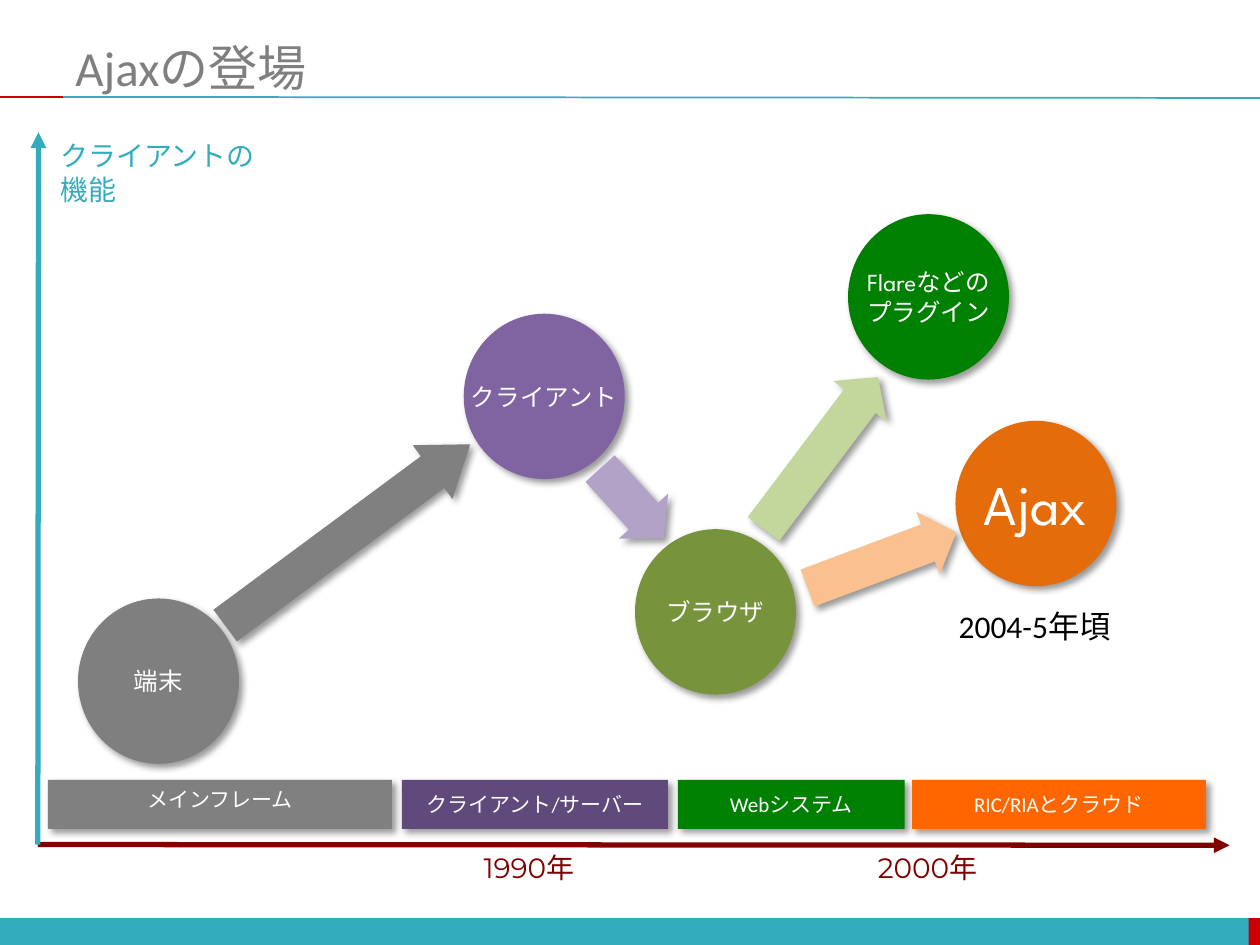
from lxml.etree import SubElement
from pptx import Presentation
from pptx.dml.color import RGBColor
from pptx.enum.shapes import MSO_CONNECTOR, MSO_SHAPE
from pptx.enum.text import MSO_ANCHOR, MSO_AUTO_SIZE, PP_ALIGN
from pptx.oxml.ns import qn
from pptx.util import Pt

COLORS = {
    "teal": "33ACBD", "red": "CC0000", "maroon": "800000", "title": "7F7F7F",
    "gray": "808080", "purple": "8064A2", "indigo": "604A7B", "lilac": "B3A2C7",
    "olive": "77933C", "green": "008000", "lime": "C3D69B", "rust": "E46C0A",
    "orange": "FF6600", "peach": "FAC090", "white": "FFFFFF", "black": "000000",
}
ASIAN_FONT = "Noto Sans CJK JP"
DIAMETERS = (92, 94.5)
BAR_TOP, BAR_HEIGHT = 445.7, 28
ARROW_HEIGHT = 38.2


class TimelineSlide:
    """Draws the elements of the timeline in one style."""

    def __init__(self, slide):
        self.slide = slide

    def color(self, name):
        return RGBColor.from_string(COLORS[name])

    def set_text(self, frame, text, size, font, color, align=PP_ALIGN.LEFT):
        frame.text = text
        for paragraph in frame.paragraphs:
            paragraph.alignment = align
            paragraph.font.size = Pt(size)
            paragraph.font.name = font
            paragraph.font.color.rgb = self.color(color)
            defaults = paragraph._p.pPr.find(qn("a:defRPr"))
            SubElement(defaults, qn("a:ea"), typeface=ASIAN_FONT)

    def block(self, kind, left, top, width, height, fill, shadow=True):
        block = self.slide.shapes.add_shape(kind, Pt(left), Pt(top), Pt(width), Pt(height))
        block.fill.solid()
        block.fill.fore_color.rgb = self.color(fill)
        block.line.fill.background()
        block.shadow.inherit = False
        if shadow:
            effects = block._element.spPr.find(qn("a:effectLst"))
            outer = SubElement(effects, qn("a:outerShdw"), blurRad=str(Pt(4)),
                               dist=str(Pt(3)), dir="2700000", algn="tl", rotWithShape="0")
            tint = SubElement(outer, qn("a:srgbClr"), val=COLORS["black"])
            SubElement(tint, qn("a:alpha"), val="40000")
        return block

    def circle(self, left, top, fill, text, size=14):
        frame = self.block(MSO_SHAPE.OVAL, left, top, *DIAMETERS, fill).text_frame
        frame.word_wrap = False
        frame.vertical_anchor = MSO_ANCHOR.MIDDLE
        self.set_text(frame, text, size, "League Spartan", "white", PP_ALIGN.CENTER)

    def bar(self, left, width, fill, text, anchor=MSO_ANCHOR.MIDDLE):
        bar = self.block(MSO_SHAPE.ROUNDED_RECTANGLE, left, BAR_TOP, width, BAR_HEIGHT, fill)
        bar.adjustments[0] = 0
        bar.text_frame.word_wrap = True
        bar.text_frame.vertical_anchor = anchor
        self.set_text(bar.text_frame, text, 12, "Calibri", "white", PP_ALIGN.CENTER)

    def arrow(self, left, top, width, angle, fill, head=0.45):
        arrow = self.block(MSO_SHAPE.RIGHT_ARROW, left, top, width, ARROW_HEIGHT, fill)
        arrow.adjustments[0] = 0.59
        arrow.adjustments[1] = head
        arrow.rotation = angle

    def line(self, start, end, color, width, arrowhead=False):
        points = [Pt(value) for value in (*start, *end)]
        line = self.slide.shapes.add_connector(MSO_CONNECTOR.STRAIGHT, *points)
        line.line.color.rgb = self.color(color)
        line.line.width = Pt(width)
        properties = line._element.spPr
        if arrowhead:
            SubElement(properties.find(qn("a:ln")), qn("a:tailEnd"), type="triangle")
        SubElement(properties, qn("a:effectLst"))

    def label(self, left, top, width, height, text, size, font, color, grow=True):
        box = self.slide.shapes.add_textbox(Pt(left), Pt(top), Pt(width), Pt(height))
        frame = box.text_frame
        frame.word_wrap = True
        if grow:
            frame.auto_size = MSO_AUTO_SIZE.SHAPE_TO_FIT_TEXT
        else:
            frame.vertical_anchor = MSO_ANCHOR.MIDDLE
        self.set_text(frame, text, size, font, color)


def main():
    deck = Presentation()
    deck.slide_width, deck.slide_height = Pt(720), Pt(540)
    timeline = TimelineSlide(deck.slides.add_slide(deck.slide_layouts[6]))

    for left, width, fill in ((0, 720, "teal"), (713.5, 6.5, "red")):
        timeline.block(MSO_SHAPE.RECTANGLE, left, 524.6, width, 15.4, fill, shadow=False)
    timeline.line((36, 55.4), (720, 56), "teal", 1)
    timeline.line((0, 55.4), (36, 55.4), "red", 1)
    timeline.label(36, 21.6, 684, 33.1, "Ajaxの登場", 28, "Calibri", "title", grow=False)

    origin = (21.6, 482.6)
    timeline.line(origin, (702.7, 483), "maroon", 3, arrowhead=True)
    timeline.line(origin, (22, 75.6), "teal", 3, arrowhead=True)
    for left, year in ((269.3, "1990年"), (494.6, "2000年")):
        timeline.label(left, 482.4, 74.2, 26.6, year, 16, "Montserrat", "maroon")
    timeline.label(27.4, 75.6, 139.7, 26.6, "クライアントの機能", 16, ASIAN_FONT, "teal")

    timeline.bar(27.4, 196.6, "gray", "メインフレーム", MSO_ANCHOR.TOP)
    timeline.bar(229.7, 151.9, "indigo", "クライアント/サーバー")
    timeline.bar(387.4, 129.6, "green", "Webシステム")
    timeline.bar(521.3, 167.8, "orange", "RIC/RIAとクラウド")

    timeline.circle(44.6, 342, "title", "端末")
    timeline.circle(265, 179.3, "purple", "クライアント")
    timeline.circle(362.9, 302.4, "olive", "ブラウザ")
    timeline.circle(484.6, 122.4, "green", "Flareなどの\nプラグイン")
    timeline.circle(546, 240.5, "rust", "Ajax", 32)

    timeline.arrow(111.6, 286.6, 174.2, 323.5, "gray", head=0.7)
    timeline.arrow(334.1, 268.6, 54, 47.6, "lilac")
    timeline.arrow(414.7, 239.8, 108.7, 307, "lime")
    timeline.arrow(458.6, 301, 90.7, 339.5, "peach")
    timeline.label(540.7, 343.4, 102.2, 28.8, "2004-5年頃", 18, "Calibri", "black")

    deck.save("out.pptx")


if __name__ == "__main__":
    main()
